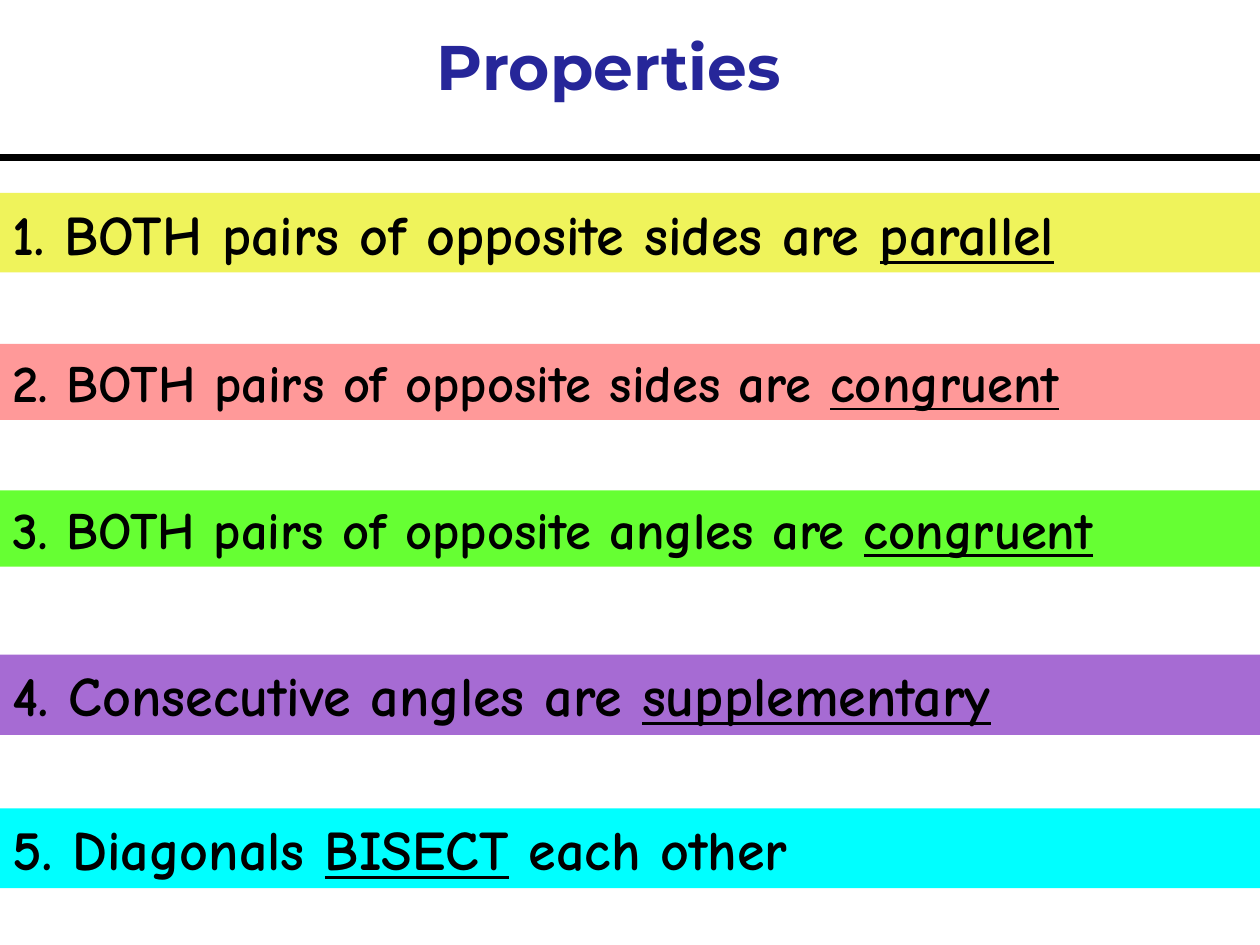
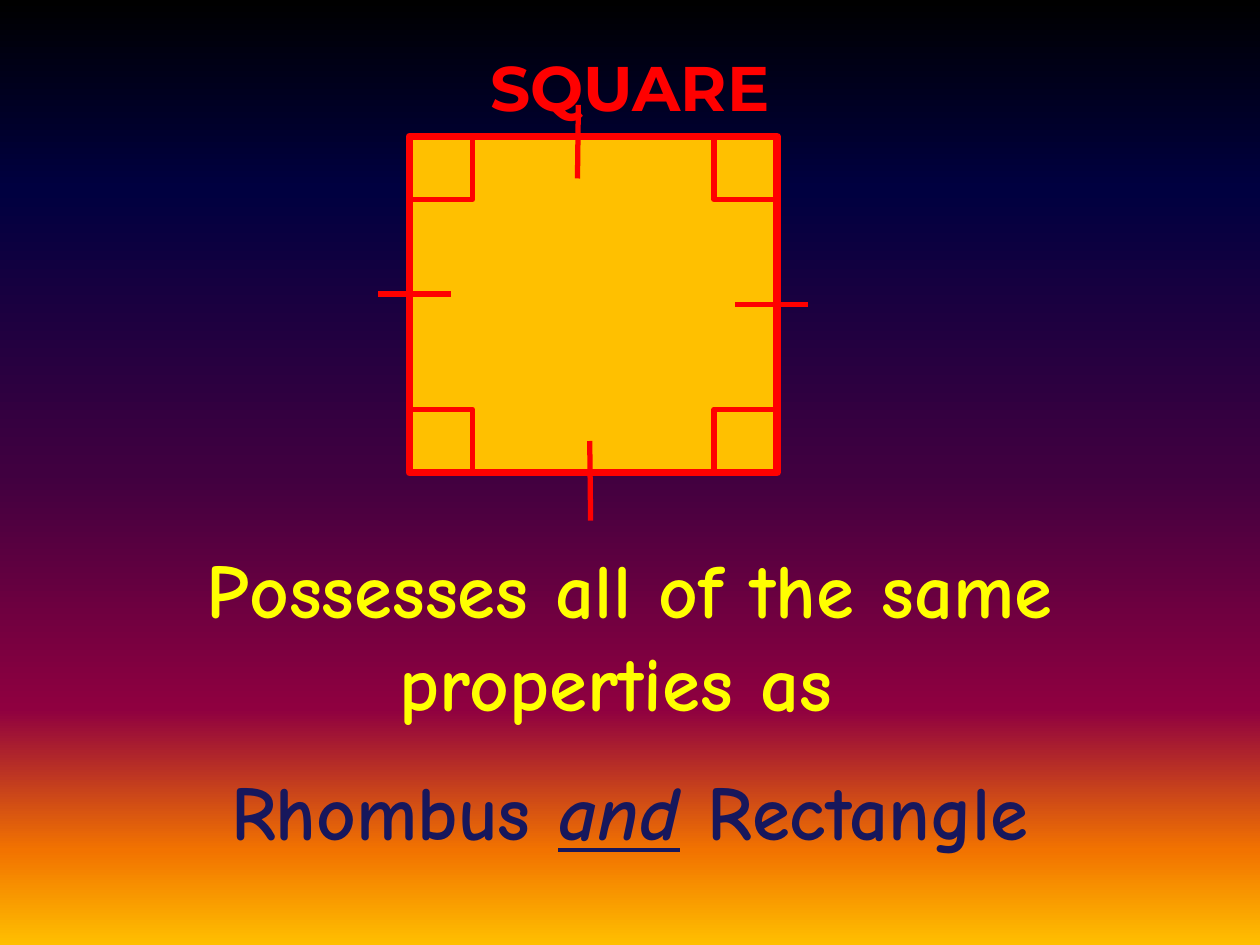
from collections import namedtuple
from dataclasses import dataclass

from lxml import etree
from pptx import Presentation
from pptx.dml.color import RGBColor
from pptx.enum.shapes import MSO_CONNECTOR, MSO_SHAPE
from pptx.enum.text import MSO_ANCHOR, PP_ALIGN
from pptx.oxml.ns import qn
from pptx.util import Pt

RECTANGLE = MSO_SHAPE.RECTANGLE
STRAIGHT = MSO_CONNECTOR.STRAIGHT
TOP = MSO_ANCHOR.TOP
LEFT, CENTER = PP_ALIGN.LEFT, PP_ALIGN.CENTER

Box = namedtuple("Box", "left top width height")
Span = namedtuple("Span", "text underline italic", defaults=(False, False))
Property = namedtuple("Property", "top height color size spans")


@dataclass(frozen=True)
class Theme:
    title_font: str = "Montserrat"
    body_font: str = "Comic Neue"
    title_size: int = 36
    band_size: int = 32
    small_band_size: int = 30
    body_size: int = 44
    black: str = "000000"
    white: str = "FFFFFF"
    title_blue: str = "262699"
    navy: str = "17175C"
    red: str = "FF0000"
    yellow: str = "FFFF00"
    gold: str = "FFC000"
    heavy_line: float = 4.5
    line: float = 3
    sunset: tuple = ((0, "000000"), (20, "000040"), (50, "400040"),
                     (75, "8F0040"), (90, "F27300"), (100, "FFBF00"))


THEME = Theme()
PAGE = Box(0, 0, 720, 540)

PROPERTIES = (
    Property(110.25, 45.5, "EFF35B", THEME.band_size,
             (Span("1. BOTH pairs of opposite sides are "), Span("parallel", True))),
    Property(196.5, 43.5, "FF9999", THEME.small_band_size,
             (Span("2. BOTH pairs of opposite sides are "), Span("congruent", True))),
    Property(280.25, 43.5, "66FF33", THEME.small_band_size,
             (Span("3. BOTH pairs of opposite angles are "), Span("congruent", True))),
    Property(374, 46, "A66BD3", THEME.band_size,
             (Span("4. Consecutive angles are "), Span("supplementary", True))),
    Property(462, 45.5, "00FFFF", THEME.band_size,
             (Span("5. Diagonals "), Span("BISECT", True), Span(" each other"))),
)


def points(*values):
    return [Pt(value) for value in values]


def write_paragraph(para, spans, font, size, color, align=LEFT):
    para.alignment = align
    para.font.name = font
    para.font.size = Pt(size)
    para.font.bold = True
    para.font.color.rgb = RGBColor.from_string(color)
    for span in spans:
        run = para.add_run()
        run.text = span.text
        if span.underline:
            run.font.underline = True
        if span.italic:
            run.font.italic = True


def add_text_frame(page, box):
    frame = page.shapes.add_textbox(*points(*box)).text_frame
    frame.word_wrap = True
    return frame


def add_title(page, box, text, color):
    frame = add_text_frame(page, box)
    write_paragraph(frame.paragraphs[0], [Span(text)], THEME.title_font,
                    THEME.title_size, color, CENTER)


def add_rectangle(page, box, fill=None, line=None, weight=THEME.line):
    shape = page.shapes.add_shape(RECTANGLE, *points(*box))
    shape.shadow.inherit = False
    if fill:
        shape.fill.solid()
        shape.fill.fore_color.rgb = RGBColor.from_string(fill)
    else:
        shape.fill.background()
    if line:
        shape.line.color.rgb = RGBColor.from_string(line)
        shape.line.width = Pt(weight)
    else:
        shape.line.fill.background()
    return shape


def add_line(page, ends, color, weight):
    line = page.shapes.add_connector(STRAIGHT, *points(*ends))
    line.line.color.rgb = RGBColor.from_string(color)
    line.line.width = Pt(weight)
    etree.SubElement(line._element.spPr, qn("a:effectLst"))


def add_property_band(page, box, item):
    frame = add_rectangle(page, box, item.color).text_frame
    frame.word_wrap = True
    frame.vertical_anchor = TOP
    write_paragraph(frame.paragraphs[0], item.spans, THEME.body_font, item.size, THEME.black)


def set_sunset_background(page):
    """Fill the page from top to bottom with all the sunset stops."""
    fill = page.background.fill
    fill.gradient()
    fill.gradient_angle = 270
    stops = page.background._cSld.find(".//" + qn("a:gsLst"))
    stops.clear()
    for position, color in THEME.sunset:
        stop = etree.SubElement(stops, qn("a:gs"), pos=str(position * 1000))
        etree.SubElement(stop, qn("a:srgbClr"), val=color)


def add_marked_square(page, box):
    """Draw the square with its right-angle corners and equal-side ticks."""
    add_rectangle(page, box, THEME.gold, THEME.red, THEME.heavy_line)
    corner = 36
    for left in (box.left, box.left + box.width - corner):
        for top in (box.top, box.top + box.height - corner):
            add_rectangle(page, Box(left, top, corner, corner), line=THEME.red)
    side_ticks = (
        (-18, 90, 24, 90),
        (103, 174, 103.5, 219.5),
        (96.5, -18, 96, 24),
        (186, 96, 228, 96),
    )
    for x1, y1, x2, y2 in side_ticks:
        ends = (box.left + x1, box.top + y1, box.left + x2, box.top + y2)
        add_line(page, ends, THEME.red, THEME.line)


def add_square_summary(page, box):
    frame = add_text_frame(page, box)
    write_paragraph(frame.paragraphs[0], [Span("Possesses all of the same properties as ")],
                    THEME.body_font, THEME.body_size, THEME.yellow, CENTER)
    shapes_para = frame.add_paragraph()
    shapes_para.space_before = Pt(21)
    write_paragraph(shapes_para, [Span("Rhombus "), Span("and", True, True), Span(" Rectangle")],
                    THEME.body_font, THEME.body_size, THEME.navy, CENTER)


def build_properties_page(page, box):
    page.background.fill.solid()
    page.background.fill.fore_color.rgb = RGBColor.from_string(THEME.white)
    add_title(page, Box(box.left + 78, box.top + 12, 540, 66), "Properties", THEME.title_blue)
    rule_top = box.top + 90
    add_line(page, (box.left, rule_top, box.left + box.width, rule_top),
             THEME.black, THEME.heavy_line)
    for item in PROPERTIES:
        band = Box(box.left, box.top + item.top, box.width, item.height)
        add_property_band(page, band, item)


def build_square_page(page, box):
    set_sunset_background(page)
    add_marked_square(page, Box(box.left + 234, box.top + 78, 210, 192))
    add_square_summary(page, Box(box.left + 18, box.top + 306, box.width - 36, 194))
    add_title(page, Box(box.left + 72, box.top + 24, box.width - 144, 36), "SQUARE", THEME.red)


def main():
    deck = Presentation()
    deck.slide_width, deck.slide_height = points(PAGE.width, PAGE.height)
    blank = deck.slide_layouts[6]
    for build_page in (build_properties_page, build_square_page):
        build_page(deck.slides.add_slide(blank), PAGE)
    deck.save("out.pptx")


if __name__ == "__main__":
    main()
